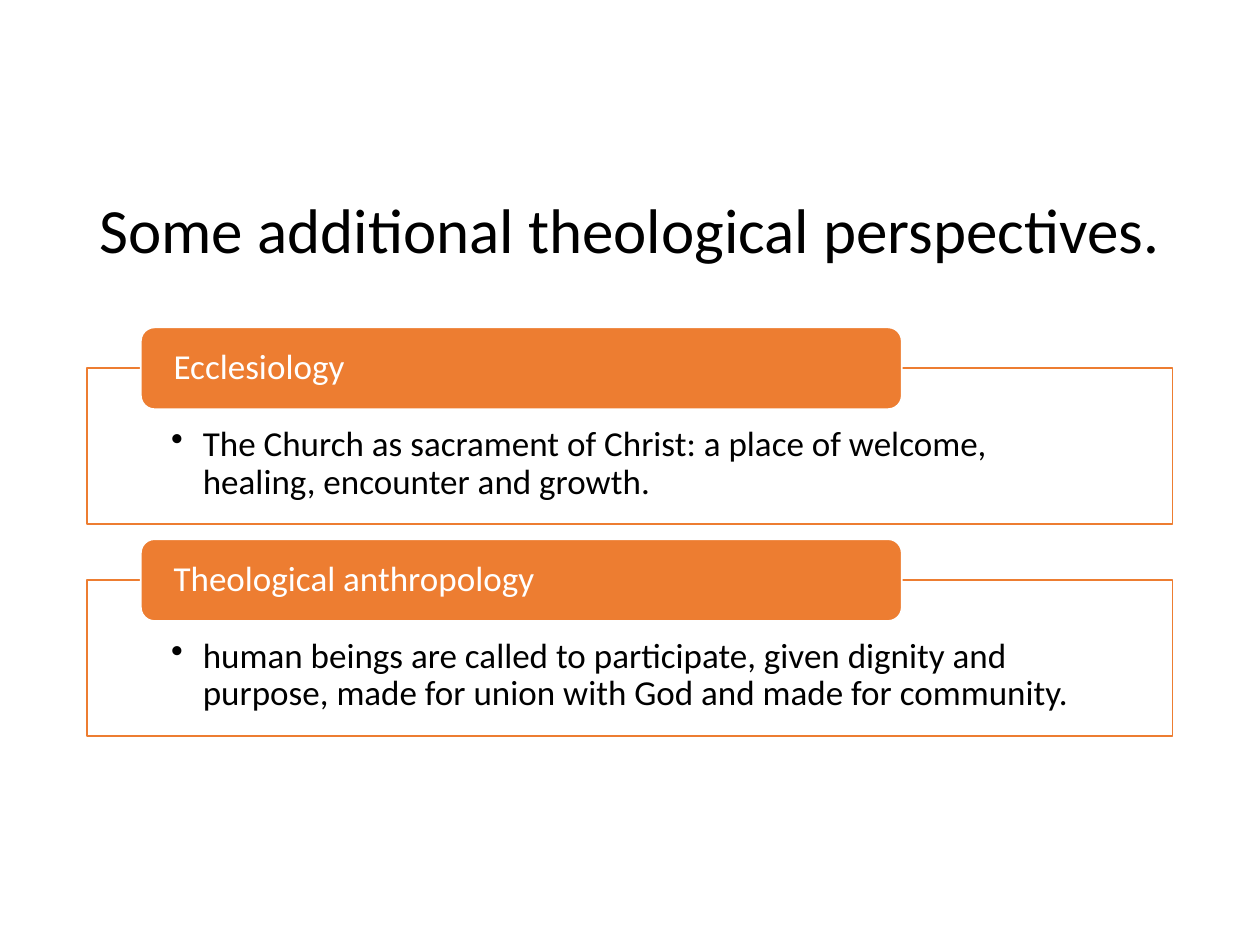
from lxml.etree import SubElement
from pptx import Presentation
from pptx.dml.color import RGBColor
from pptx.enum.shapes import MSO_SHAPE as Shape
from pptx.enum.text import MSO_ANCHOR as Anchor, PP_ALIGN as Align
from pptx.oxml.ns import qn
from pptx.util import Cm, Pt

ORANGE = RGBColor(0xED, 0x7D, 0x31)
WHITE = RGBColor(0xFF, 0xFF, 0xFF)
BLACK = RGBColor(0x00, 0x00, 0x00)

LEFT, WIDTH = 1.75, 21.89
FIRST_TOP, SECTION_STEP = 6.6, 4.27
PANEL_DROP = 0.82

SECTIONS = [
    ("Ecclesiology",
     "The Church as sacrament of Christ: a place of welcome, healing, "
     "encounter and growth."),
    ("Theological anthropology",
     "human beings are called to participate, given dignity and purpose, "
     "made for union with God and made for community."),
]


class SlideBuilder:
    font = "Calibri"
    line_spacing = 0.9

    def __init__(self, page):
        self.page = page

    def set_text(self, box, text, size, color, anchor, insets, align=Align.LEFT):
        """Fill a shape with one paragraph; insets are left, top, right, bottom."""
        frame = box.text_frame
        frame.word_wrap = True
        frame.vertical_anchor = anchor
        (frame.margin_left, frame.margin_top,
         frame.margin_right, frame.margin_bottom) = map(Cm, insets)
        frame.text = text
        para = frame.paragraphs[0]
        para.alignment = align
        para.line_spacing = self.line_spacing
        span = para.runs[0]
        span.font.name = self.font
        span.font.size = Pt(size)
        span.font.color.rgb = color
        return para

    def block(self, kind, left, top, width, height, fill, line):
        box = self.page.shapes.add_shape(
            kind, Cm(left), Cm(top), Cm(width), Cm(height))
        box.shadow.inherit = False
        box.fill.solid()
        box.fill.fore_color.rgb = fill
        box.line.color.rgb = line
        box.line.width = Pt(1)
        return box

    def title(self, text):
        box = self.page.shapes.add_textbox(
            Cm(LEFT), Cm(3.53), Cm(WIDTH), Cm(2.36))
        self.set_text(box, text, 36, BLACK, Anchor.MIDDLE,
                      (0, 0.13, 0, 0.13), Align.CENTER)

    def panel(self, text, top):
        box = self.block(Shape.RECTANGLE, LEFT, top, WIDTH, 3.15, WHITE, ORANGE)
        para = self.set_text(box, text, 20, BLACK, Anchor.TOP,
                             (1.7, 1.17, 1.7, 0.41))
        self.bullet(para)

    def bullet(self, para):
        indent = Cm(0.64)
        props = para._p.get_or_add_pPr()
        props.set("marL", str(indent))
        props.set("indent", str(-indent))
        SubElement(props, qn("a:buChar"), char="•")

    def header(self, text, top):
        box = self.block(Shape.ROUNDED_RECTANGLE, 2.84, top, 15.34, 1.65,
                         ORANGE, WHITE)
        self.set_text(box, text, 20, WHITE, Anchor.MIDDLE, (0.58, 0, 0.58, 0))


def main():
    deck = Presentation()
    deck.slide_width, deck.slide_height = Cm(25.4), Cm(19.05)
    builder = SlideBuilder(deck.slides.add_slide(deck.slide_layouts[6]))

    builder.title("Some additional theological perspectives.")
    for index, (heading, statement) in enumerate(SECTIONS):
        top = FIRST_TOP + index * SECTION_STEP
        builder.panel(statement, top + PANEL_DROP)
        builder.header(heading, top)

    deck.save("out.pptx")


if __name__ == "__main__":
    main()
